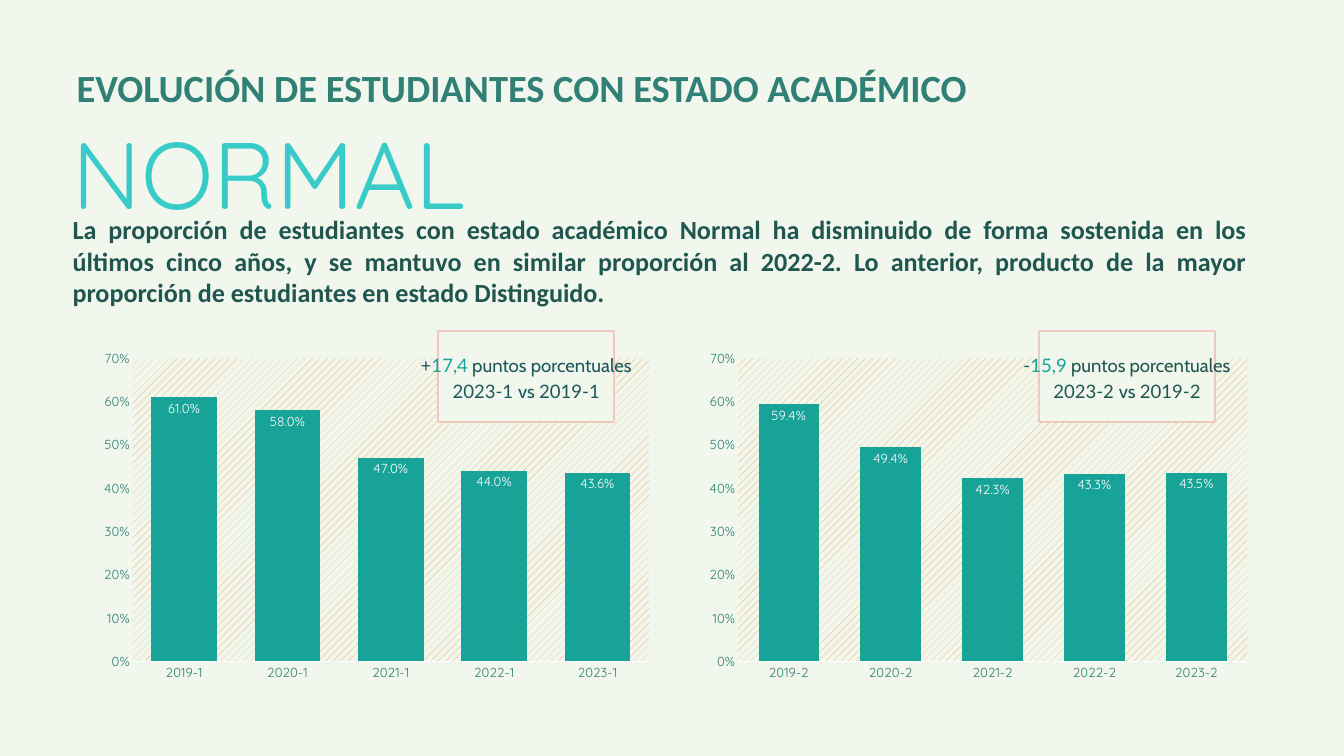
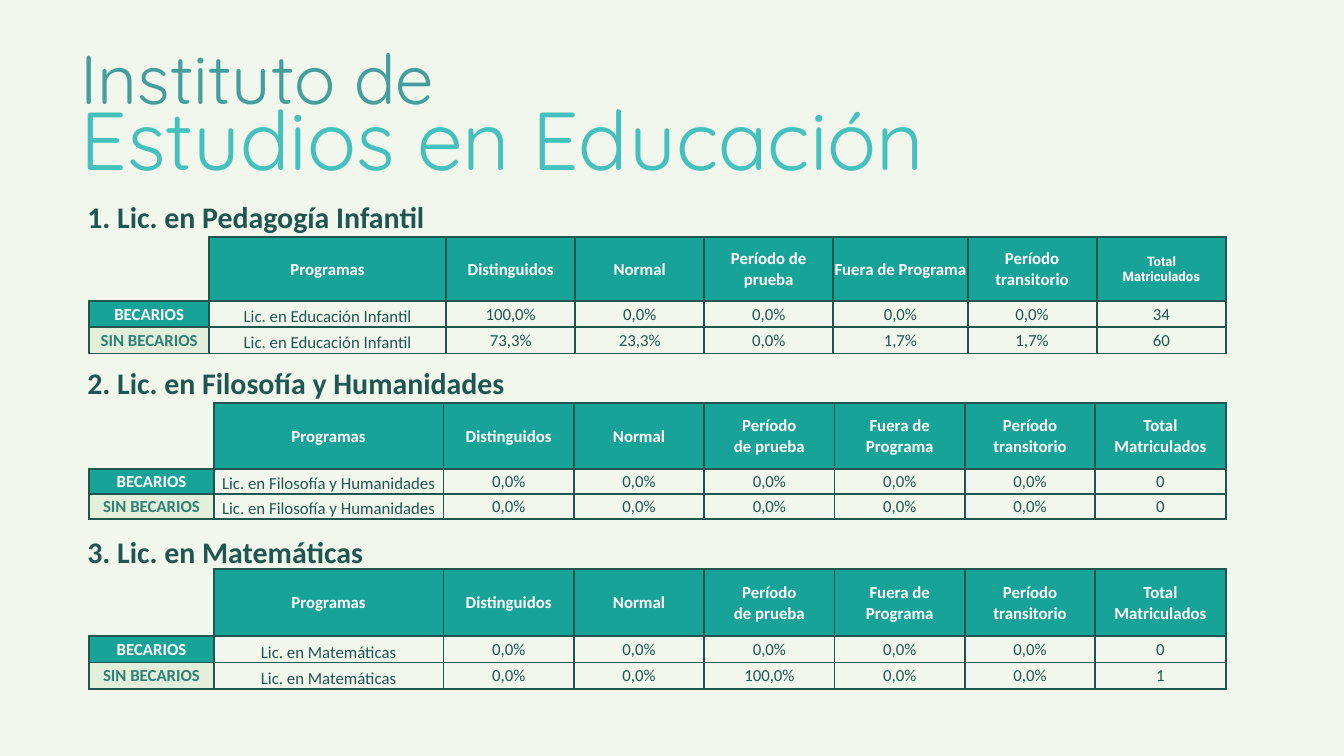
import dataclasses

import pptx
import pptx.chart.data
import pptx.dml.color
import pptx.enum.chart
import pptx.enum.shapes
import pptx.enum.text
import pptx.oxml
import pptx.oxml.ns
import pptx.util

Inches = pptx.util.Inches
Pt = pptx.util.Pt
Align = pptx.enum.text.PP_ALIGN
Anchor = pptx.enum.text.MSO_ANCHOR


@dataclasses.dataclass(frozen=True)
class Theme:
    paper: str = "F1F7ED"
    teal: str = "17A398"
    mid: str = "308076"
    dark: str = "205650"
    ink: str = "1C575A"
    aqua: str = "39CBC8"
    dusk: str = "449E9C"
    sea: str = "44C0BD"
    mint: str = "E2EFDA"
    blush: str = "EECABC"
    orange: str = "F79646"
    white: str = "FFFFFF"
    body: str = "Calibri"
    thin: str = "Quicksand"
    figure: str = "Lato"
    word: str = "Cabin"
    compact: str = "Roboto"
    huge: float = 101
    large: float = 88
    big: float = 74
    title: float = 41.2
    head: float = 32
    lead: float = 28
    note: float = 19.9
    cell: float = 18
    small: float = 14
    edge: float = 2.25


THEME = Theme()


@dataclasses.dataclass(frozen=True)
class Face:
    size: float
    font: str
    color: str
    bold: bool = False


def rgb(code):
    return pptx.dml.color.RGBColor.from_string(code)


def dress(font, face):
    font.size = Pt(face.size)
    font.name = face.font
    font.bold = face.bold
    font.color.rgb = rgb(face.color)


def fill_text(frame, paras, align, gap=None):
    """Each paragraph is a list of (text, face) runs; a vertical tab breaks a line."""
    for i, runs in enumerate(paras):
        para = frame.paragraphs[0] if i == 0 else frame.add_paragraph()
        para.alignment = align
        if gap:
            para.line_spacing = Pt(gap)
        for text, face in runs:
            for j, part in enumerate(text.split("\v")):
                if j:
                    para.add_line_break()
                run = para.add_run()
                run.text = part
                dress(run.font, face)


def xml(tag, inner):
    spaces = pptx.oxml.ns.nsdecls("a", "c")
    return pptx.oxml.parse_xml(f"<{tag} {spaces}>{inner}</{tag}>")


class Deck:
    def __init__(self, theme):
        self.theme = theme
        self.file = pptx.Presentation()
        self.file.slide_width = Inches(20)
        self.file.slide_height = Inches(11.25)
        self.slide = None

    def page(self):
        self.slide = self.file.slides.add_slide(self.file.slide_layouts[6])
        back = self.slide.background.fill
        back.solid()
        back.fore_color.rgb = rgb(self.theme.paper)

    def text(self, box, paras, align=Align.LEFT, gap=None, pad=0, shapes=None):
        """A padded box is fixed and centred in height; an unpadded one grows."""
        home = shapes or self.slide.shapes
        frame = home.add_textbox(*map(Inches, box)).text_frame
        frame.word_wrap = True
        frame.margin_left = frame.margin_right = Inches(pad)
        frame.margin_top = frame.margin_bottom = Inches(pad)
        if pad:
            frame.vertical_anchor = Anchor.MIDDLE
        else:
            frame.auto_size = pptx.enum.text.MSO_AUTO_SIZE.SHAPE_TO_FIT_TEXT
        fill_text(frame, paras, align, gap)

    def line(self, box, text, face, **more):
        self.text(box, [[(text, face)]], **more)

    def callout(self, left, paras):
        group = self.slide.shapes.add_group_shape().shapes
        kind = pptx.enum.shapes.MSO_SHAPE.RECTANGLE
        box = map(Inches, (left, 4.92, 2.62, 1.36))
        frame = group.add_shape(kind, *box)
        frame.shadow.inherit = False
        frame.fill.solid()
        frame.fill.fore_color.rgb = rgb(self.theme.paper)
        frame.line.color.rgb = rgb(self.theme.blush)
        frame.line.width = Pt(self.theme.edge)
        self.text((left - 0.38, 4.92, 3.38, 1.36), paras, Align.CENTER,
                  27.9, 0.06, group)

    def columns(self, left, term, rates, gap, plot):
        """Column chart of one term over five years."""
        theme = self.theme
        face = Face(theme.small, theme.thin, theme.mid)
        data = pptx.chart.data.CategoryChartData()
        data.categories = [f"{year}-{term}" for year in range(2019, 2024)]
        data.add_series("Series 1", rates)
        kind = pptx.enum.chart.XL_CHART_TYPE.COLUMN_CLUSTERED
        box = map(Inches, (left, 4.8, 8.92, 5.66))
        chart = self.slide.shapes.add_chart(kind, *box, data).chart
        chart.has_legend = chart.has_title = False
        dress(chart.font, face)

        for axis in (chart.category_axis, chart.value_axis):
            axis.major_tick_mark = pptx.enum.chart.XL_TICK_MARK.NONE
            axis.has_major_gridlines = False
            dress(axis.tick_labels.font, face)
        rule = chart.category_axis.format.line
        rule.color.rgb = rgb(theme.white)
        rule.width = Pt(0.75)
        scale = chart.value_axis
        scale.format.line.fill.background()
        scale.minimum_scale, scale.maximum_scale = 0, 0.7
        scale.major_unit = 0.1
        scale.tick_labels.number_format = "0%"
        scale.tick_labels.number_format_is_linked = False

        bars = chart.plots[0]
        bars.gap_width = gap
        bars.vary_by_categories = False
        series = bars.series[0]
        series.format.fill.solid()
        series.format.fill.fore_color.rgb = rgb(theme.teal)
        labels = series.data_labels
        labels.show_value = True
        labels.number_format = "0.0%"
        labels.number_format_is_linked = False
        labels.position = pptx.enum.chart.XL_LABEL_POSITION.INSIDE_END
        dress(labels.font, Face(theme.small, theme.thin, theme.white))
        self.plot_area(chart, plot)

    def plot_area(self, chart, plot):
        """Place the inner plot and give it a pattern fill."""
        qn = pptx.oxml.ns.qn
        area = chart.element.find(".//" + qn("c:plotArea"))
        for old in area.findall(qn("c:layout")):
            area.remove(old)
        sides = "".join(f'<c:{k} val="{v}"/>' for k, v in zip("xywh", plot))
        area.insert(0, xml("c:layout", '<c:manualLayout><c:layoutTarget val="inner"/>'
                           '<c:xMode val="edge"/><c:yMode val="edge"/>'
                           f"{sides}</c:manualLayout>"))
        tones = "".join(f'<a:{k}><a:srgbClr val="{c}"/></a:{k}>' for k, c in
                        (("fgClr", self.theme.orange), ("bgClr", self.theme.paper)))
        area.append(xml("c:spPr", f'<a:pattFill prst="pct10">{tones}</a:pattFill>'))

    def cell(self, cell, text, face, fill, edges="LRTB", anchor=Anchor.MIDDLE):
        props = cell._tc.get_or_add_tcPr()
        for side in "LRTB":
            paint = "<a:noFill/>"
            if side in edges:
                paint = f'<a:solidFill><a:srgbClr val="{self.theme.dark}"/></a:solidFill>'
            edge = xml(f"a:ln{side}", paint)
            edge.set("w", str(Pt(self.theme.edge)))
            props.append(edge)
        cell.margin_left = cell.margin_right = cell.margin_top = Inches(0.01)
        cell.margin_bottom = 0
        cell.vertical_anchor = anchor
        if fill:
            cell.fill.solid()
            cell.fill.fore_color.rgb = rgb(fill)
        else:
            cell.fill.background()
        if text:
            paras = [[(part, face)] for part in text.split("\n")]
            fill_text(cell.text_frame, paras, Align.CENTER)

    def table(self, top, widths, heights, heads, last, name, groups):
        """Two-row header over one row per group; last is the face of the last head."""
        theme = self.theme
        bold = Face(theme.cell, theme.body, theme.white, True)
        plain = Face(theme.cell, theme.body, theme.dark)
        shade = dataclasses.replace(bold, color=theme.mid)
        box = map(Inches, (1.33, top, sum(widths), sum(heights)))
        grid = self.slide.shapes.add_table(len(heights), len(widths), *box).table
        grid.first_row = grid.horz_banding = False
        for column, width in zip(grid.columns, widths):
            column.width = Inches(width)
        for row, height in zip(grid.rows, heights):
            row.height = Inches(height)

        self.cell(grid.cell(0, 0), "", bold, None, "R")
        self.cell(grid.cell(1, 0), "", bold, None, "RB")
        for col, head in enumerate(heads, 1):
            face = last if col == len(heads) else bold
            self.cell(grid.cell(0, col), head, face, theme.teal)
            self.cell(grid.cell(1, col), "", face, theme.teal)
            grid.cell(0, col).merge(grid.cell(1, col))

        looks = (("BECARIOS", bold, theme.teal), ("SIN BECARIOS", shade, theme.mint))
        for row, (look, values) in enumerate(zip(looks, groups), 2):
            self.cell(grid.cell(row, 0), *look)
            self.cell(grid.cell(row, 1), name, plain, theme.paper, anchor=Anchor.BOTTOM)
            for col, value in enumerate(values.split(), 2):
                self.cell(grid.cell(row, col), value, plain, theme.paper)


def trend(deck):
    theme = deck.theme
    deck.page()
    deck.line((1.08, 1.04, 12.2, 2.1), "NORMAL",
              Face(theme.huge, theme.thin, theme.aqua), gap=169.9)
    deck.line((0.92, 0.95, 13.82, 0.68),
              "EVOLUCIÓN DE ESTUDIANTES CON ESTADO ACADÉMICO ",
              Face(theme.title, theme.body, theme.mid, True),
              align=Align.CENTER, gap=49.9)
    deck.line((1.08, 3.17, 17.46, 1.41),
              "La proporción de estudiantes con estado académico Normal ha "
              "disminuido de forma sostenida en los últimos cinco años, y se "
              "mantuvo en similar proporción al 2022-2. Lo anterior, producto de "
              "la mayor proporción de estudiantes en estado Distinguido.",
              Face(theme.lead, theme.body, theme.dark, True),
              align=Align.JUSTIFY, gap=33.9)
    deck.columns(10, 2, (0.594, 0.494, 0.423, 0.433, 0.435), 68,
                 (0.11, 0.094, 0.85, 0.797))
    deck.columns(1.08, 1, (0.61, 0.58, 0.47, 0.44, 0.436), 57,
                 (0.1, 0.094, 0.862, 0.797))

    notes = ((6.52, "+", "17,4", 1, theme.ink), (15.46, "-", "15,9", 2, theme.dark))
    for left, sign, points, term, color in notes:
        figure = Face(theme.note, theme.figure, color)
        word = Face(theme.note, theme.word, color)
        accent = dataclasses.replace(figure, color=theme.teal)
        deck.callout(left, [
            [(sign, figure), (points, accent), (" puntos porcentuales", word)],
            [(f"2023-{term} ", figure), ("vs ", word), (f"2019-{term}", figure)]])


def school(deck):
    theme = deck.theme
    deck.page()
    deck.line((1.2, 0.53, 5.96, 1.26), "Instituto de",
              Face(theme.big, theme.thin, theme.dusk))
    deck.line((1.2, 1.31, 15.46, 2.96), "Estudios en Educación",
              Face(theme.large, theme.thin, theme.sea))

    total = Face(theme.cell, theme.body, theme.white, True)
    tiny = dataclasses.replace(total, size=theme.small, font=theme.compact)
    wide = [1.78, 3.53, 1.92, 1.92, 1.92, 2, 1.92, 1.93]
    even = [1.85, 3.42] + [1.94] * 6
    zero = "0,0% " * 5
    programs = (
        (3.04, "Pedagogía Infantil", 3.53, wide, [0.34, 0.34, 0.39, 0.39],
         "Período de prueba", tiny, "Educación Infantil",
         ("100,0% 0,0% 0,0% 0,0% 0,0% 34", "73,3% 23,3% 0,0% 1,7% 1,7% 60")),
        (5.51, "Filosofía y Humanidades", 6, even, [0.37] * 4,
         "Período\nde prueba", total, "Filosofía y Humanidades",
         (zero + "0", zero + "0")),
        (8.02, "Matemáticas", 8.47, even, [0.39] * 4,
         "Período\nde prueba", total, "Matemáticas",
         (zero + "0", "0,0% 0,0% 100,0% 0,0% 0,0% 1")),
    )
    head = Face(theme.head, theme.body, theme.dark, True)
    for i, (y, title, top, widths, heights, trial, last, name, groups) in enumerate(programs, 1):
        deck.line((1.3, y, 7.28, 0.46), f"{i}. Lic. en {title}", head, gap=32.7)
        heads = ("Programas", "Distinguidos", "Normal", trial, "Fuera de Programa",
                 "Período transitorio", "Total\vMatriculados")
        deck.table(top, widths, heights, heads, last, f"Lic. en {name}", groups)


def main():
    deck = Deck(THEME)
    trend(deck)
    school(deck)
    deck.file.save("out.pptx")


if __name__ == "__main__":
    main()
